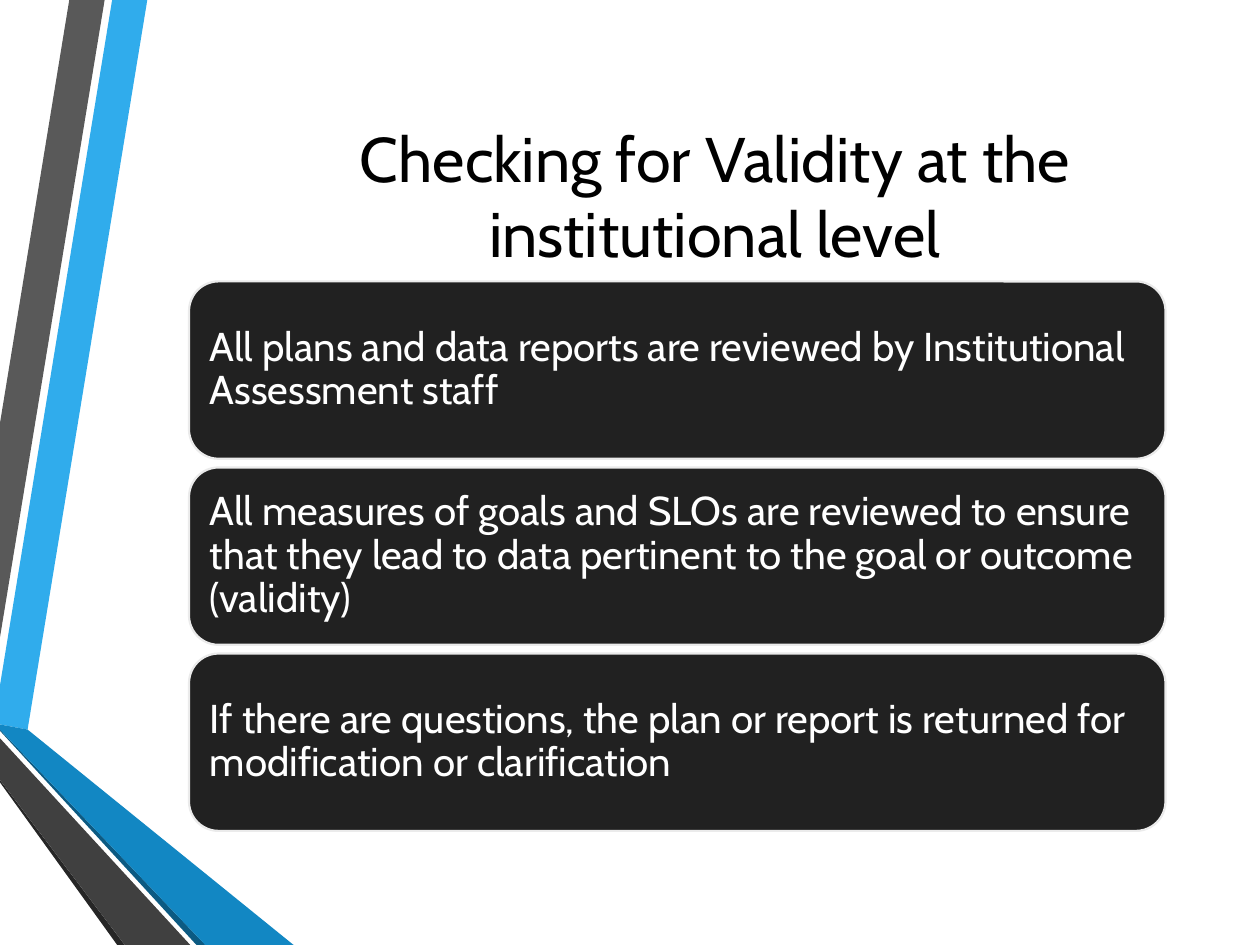
import pptx
import pptx.util
import pptx.dml.color
import pptx.enum.shapes
import pptx.enum.text

Pt = pptx.util.Pt
RGBColor = pptx.dml.color.RGBColor

SKY = RGBColor(0x30, 0xAC, 0xEC)
BLUE = RGBColor(0x12, 0x87, 0xC3)
NAVY = RGBColor(0x0C, 0x5A, 0x82)
GREY = RGBColor(0x59, 0x59, 0x59)
CHARCOAL = RGBColor(0x40, 0x40, 0x40)
SHADE = RGBColor(0x26, 0x26, 0x26)
CARD = RGBColor(0x21, 0x21, 0x21)
CARD_EDGE = RGBColor(0xEB, 0xEB, 0xEB)
BLACK = RGBColor(0, 0, 0)
WHITE = RGBColor(0xFF, 0xFF, 0xFF)

FONT = "Cabin"
RIBBONS = [
    (SKY, [(0, 391.7), (0, 414), (15.8, 416.9), (84.2, 0), (64.1, 0)]),
    (GREY, [(59.8, 0), (39.6, 0), (0, 241.9), (0, 364.3)]),
    (SHADE, [(0, 445.7), (0, 447.1), (67, 540), (71.3, 540)]),
    (NAVY, [(0, 416.9), (0, 417.6), (112.3, 540), (117.4, 540)]),
    (BLUE, [(0, 416.9), (117.4, 540), (167.8, 540), (15.8, 416.9), (0, 414)]),
    (CHARCOAL, [(0, 445.7), (71.3, 540), (108.7, 540), (0, 421.9)]),
]
TITLE = "Checking for Validity at the institutional level"
STATEMENTS = [
    "All plans and data reports are reviewed by Institutional Assessment staff",
    "All measures of goals and SLOs are reviewed to ensure that they lead to "
    "data pertinent to the goal or outcome (validity)",
    "If there are questions, the plan or report is returned for modification "
    "or clarification",
]


def write(frame, text, size, color, align):
    frame.word_wrap = True
    frame.vertical_anchor = pptx.enum.text.MSO_ANCHOR.MIDDLE
    paragraph = frame.paragraphs[0]
    paragraph.text = text
    paragraph.alignment = align
    paragraph.font.name = FONT
    paragraph.font.size = Pt(size)
    paragraph.font.color.rgb = color
    return paragraph


def add_ribbons(slide, left, top):
    for color, corners in RIBBONS:
        points = [(Pt(left + x), Pt(top + y)) for x, y in corners]
        outline = slide.shapes.build_freeform(*points[0])
        outline.add_line_segments(points[1:], close=True)
        ribbon = outline.convert_to_shape()
        ribbon.shadow.inherit = False
        ribbon.fill.solid()
        ribbon.fill.fore_color.rgb = color
        ribbon.line.fill.background()


def add_title(slide, left, top, width, height):
    title = slide.shapes.add_textbox(Pt(left), Pt(top), Pt(width), Pt(height))
    write(title.text_frame, TITLE, 36, BLACK, pptx.enum.text.PP_ALIGN.CENTER)


def add_statements(slide, left, top, width, height, gap=5):
    count = len(STATEMENTS)
    card_height = (height - gap * (count - 1)) / count
    for row, statement in enumerate(STATEMENTS):
        card = slide.shapes.add_shape(
            pptx.enum.shapes.MSO_SHAPE.ROUNDED_RECTANGLE,
            Pt(left), Pt(top + row * (card_height + gap)),
            Pt(width), Pt(card_height))
        card.shadow.inherit = False
        card.fill.solid()
        card.fill.fore_color.rgb = CARD
        card.line.color.rgb = CARD_EDGE
        card.line.width = Pt(1.25)
        frame = card.text_frame
        frame.margin_left = frame.margin_right = Pt(7)
        frame.margin_top = frame.margin_bottom = Pt(7)
        paragraph = write(frame, statement, 23, WHITE,
                          pptx.enum.text.PP_ALIGN.LEFT)
        paragraph.line_spacing = 0.9


def main():
    deck = pptx.Presentation()
    deck.slide_width = Pt(720)
    deck.slide_height = Pt(540)
    slide = deck.slides.add_slide(deck.slide_layouts[6])
    add_ribbons(slide, 0, 0)
    add_title(slide, 144, 60.5, 529, 101.5)
    add_statements(slide, 108, 160.8, 558, 314)
    deck.save("out.pptx")


if __name__ == "__main__":
    main()
